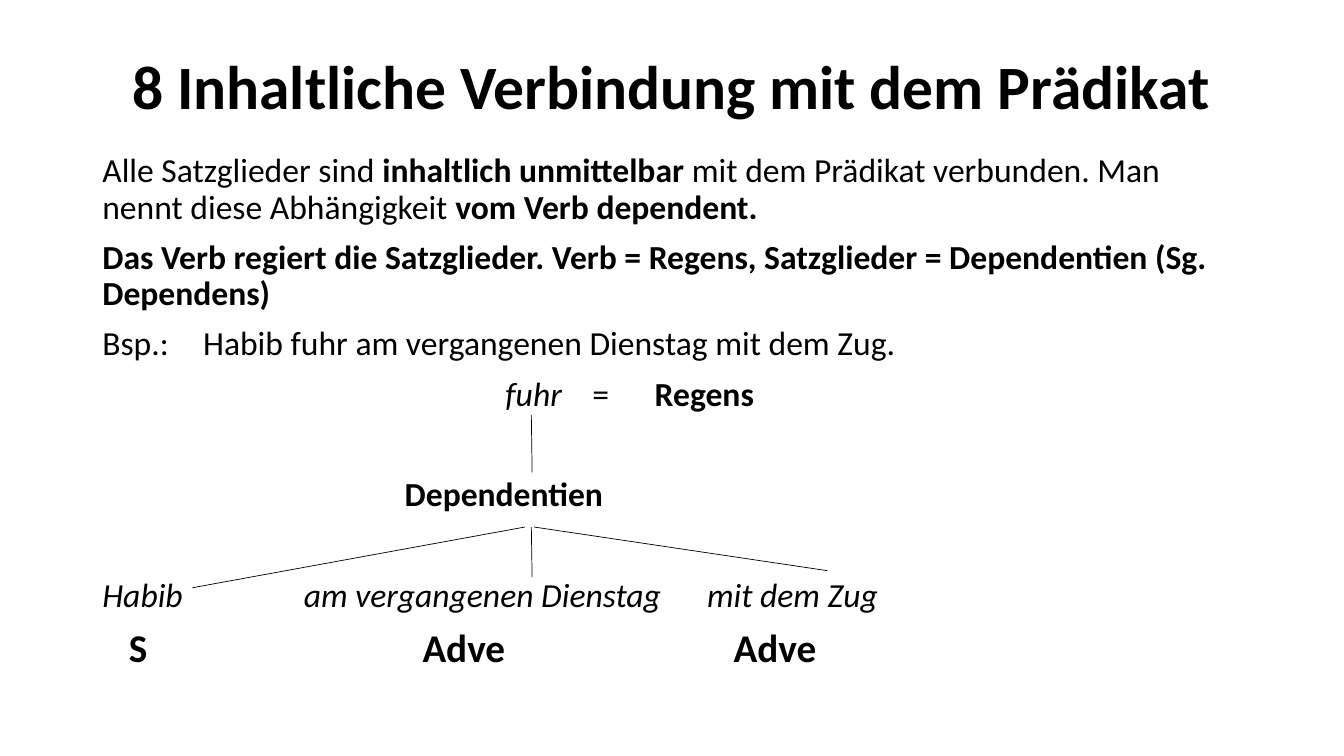
from dataclasses import dataclass

from lxml import etree
from pptx import Presentation
from pptx.dml.color import RGBColor
from pptx.enum.shapes import MSO_CONNECTOR
from pptx.enum.text import MSO_ANCHOR, PP_ALIGN
from pptx.oxml.ns import qn
from pptx.util import Cm, Pt

STRAIGHT = MSO_CONNECTOR.STRAIGHT
MIDDLE, TOP = MSO_ANCHOR.MIDDLE, MSO_ANCHOR.TOP
CENTER, LEFT = PP_ALIGN.CENTER, PP_ALIGN.LEFT


@dataclass(frozen=True)
class Theme:
    font: str = "Calibri"
    ink: RGBColor = RGBColor(0, 0, 0)
    title: int = 44
    body: int = 24
    role: int = 28
    rule: float = 0.5
    lead: float = 0.9
    gap: int = 10
    skip: int = 46  # gap that leaves one line free


THEME = Theme()

# Each paragraph: runs (text, style), tab stops in cm, size, space before
BODY = [
    ([("Alle Satzglieder sind ", ""), ("inhaltlich unmittelbar ", "b"),
      ("mit dem Prädikat verbunden. Man nennt diese Abhängigkeit ", ""),
      ("vom Verb dependent.", "b")], [], THEME.body, THEME.gap),
    ([("Das Verb regiert die Satzglieder. Verb = Regens, "
       "Satzglieder = Dependentien (Sg. Dependens)", "b")],
     [], THEME.body, THEME.gap),
    ([("Bsp.:\tHabib fuhr am vergangenen Dienstag mit dem Zug.", "")],
     [2.54], THEME.body, THEME.gap),
    ([("\tfuhr", "i"), ("\t=", ""), ("\tRegens", "b")],
     [10.16, 12.35, 13.92], THEME.body, THEME.gap),
    ([("\tDependentien", "b")], [7.62], THEME.body, THEME.skip),
    ([("Habib\tam vergangenen Dienstag\tmit dem Zug", "i")],
     [5.08, 15.24], THEME.body, THEME.skip),
    ([("\tS\tAdve\tAdve", "b")], [0.67, 8.07, 15.91], THEME.role, THEME.gap),
]

# Branches of the tree: x1, y1, x2, y2 in cm
TREE = [
    (13.39, 10.46, 13.41, 11.91),
    (13.23, 13.28, 4.85, 14.81),
    (13.39, 13.28, 13.41, 14.55),
    (13.46, 13.28, 20.85, 14.38),
]


def add_box(slide, x, y, w, h, anchor):
    box = slide.shapes.add_textbox(Cm(x), Cm(y), Cm(w), Cm(h))
    frame = box.text_frame
    frame.word_wrap = True
    frame.vertical_anchor = anchor
    return frame


def set_tabs(para, stops):
    tabs = etree.SubElement(para._p.get_or_add_pPr(), qn("a:tabLst"))
    for stop in stops:
        etree.SubElement(tabs, qn("a:tab"), pos=str(int(Cm(stop))), algn="l")


def fill_para(para, runs, stops, size, before, align=LEFT):
    para.alignment = align
    para.line_spacing = THEME.lead
    para.space_before = Pt(before)
    if stops:
        set_tabs(para, stops)
    for text, style in runs:
        run = para.add_run()
        run.text = text
        font = run.font
        font.name = THEME.font
        font.size = Pt(size)
        font.color.rgb = THEME.ink
        font.bold = "b" in style
        font.italic = "i" in style


def add_line(slide, x1, y1, x2, y2):
    line = slide.shapes.add_connector(STRAIGHT, Cm(x1), Cm(y1), Cm(x2), Cm(y2))
    line.line.color.rgb = THEME.ink
    line.line.width = Pt(THEME.rule)
    etree.SubElement(line._element.spPr, qn("a:effectLst"))


def main():
    deck = Presentation()
    deck.slide_width, deck.slide_height = Cm(33.87), Cm(19.05)
    slide = deck.slides.add_slide(deck.slide_layouts[6])

    # Title
    head = add_box(slide, 2.33, 1.01, 29.21, 2.5, MIDDLE)
    fill_para(head.paragraphs[0],
              [("8 Inhaltliche Verbindung mit dem Prädikat", "b")],
              [], THEME.title, 0, CENTER)

    # Body text and tree labels
    body = add_box(slide, 2.33, 3.75, 29.21, 13.41, TOP)
    for i, item in enumerate(BODY):
        para = body.add_paragraph() if i else body.paragraphs[0]
        fill_para(para, *item)

    # Tree branches
    for ends in TREE:
        add_line(slide, *ends)

    deck.save("out.pptx")


if __name__ == "__main__":
    main()
